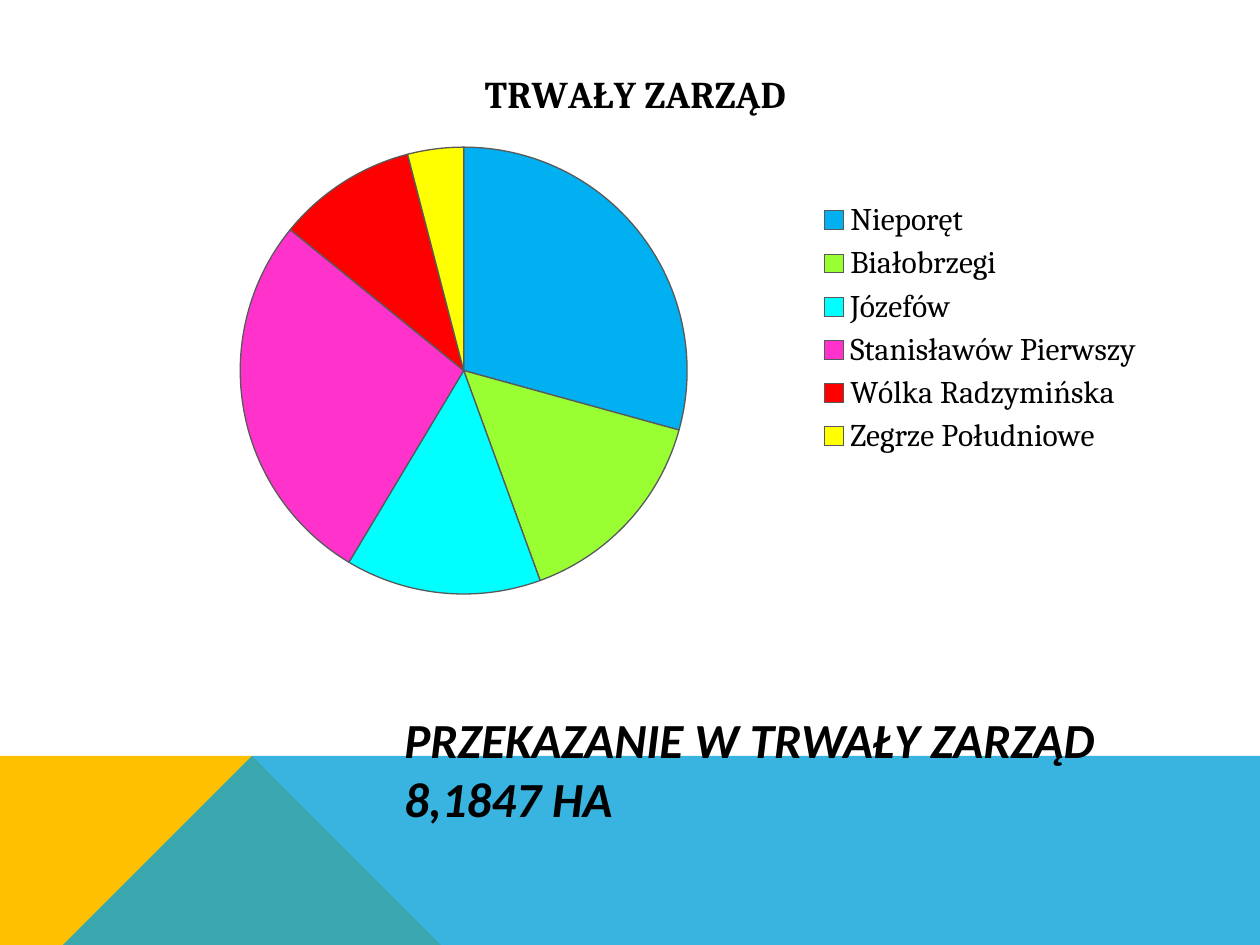
from pptx import Presentation
from pptx import util as u
from pptx.chart.data import CategoryChartData
from pptx.dml.color import RGBColor
from pptx.enum import chart as charts, text
from pptx.oxml import parse_xml
from lxml import etree

DRAWING = "http://schemas.openxmlformats.org/drawingml/2006/main"
CHART = "http://schemas.openxmlformats.org/drawingml/2006/chart"


def paint(format_part, color):
    """Give a fill, line or font part a solid hex colour."""
    if hasattr(format_part, "solid"):
        format_part.solid()
        format_part = format_part.fore_color
    else:
        format_part = format_part.color
    format_part.rgb = RGBColor.from_string(color)


def add_span(para, words, font="Calibri", size=28, color="000000",
             bold=False, italic=False):
    span = para.add_run()
    span.text = words
    span.font.name = font
    span.font.size = u.Pt(size)
    span.font.bold = bold
    span.font.italic = italic
    paint(span.font, color)


deck = Presentation()
deck.slide_width, deck.slide_height = u.Inches(10), u.Inches(7.5)
page = deck.slides.add_slide(deck.slide_layouts[5])
paint(page.background.fill, "FFFFFF")

# Bottom band: yellow triangle under a translucent blue slope
top, bottom, peak = 5.52, 7.5, 2.23
bands = [
    ("FFC000", 100, [(0, bottom), (0, top), (peak, top), (3.91, bottom)]),
    ("08A1D9", 80, [(0, bottom), (peak, top), (10, top), (10, bottom)]),
]
for color, opacity, corners in bands:
    outline = page.shapes.build_freeform(*corners[0], scale=u.Inches(1))
    outline.add_line_segments(corners[1:], close=True)
    band = outline.convert_to_shape()
    band.shadow.inherit = False
    band.line.fill.background()
    paint(band.fill, color)
    if opacity < 100:
        tint = band.element.find(f".//{{{DRAWING}}}srgbClr")
        etree.SubElement(tint, f"{{{DRAWING}}}alpha", val=str(opacity * 1000))

# Title, brought in front of the band
title = page.shapes.title
title.left, title.top = u.Inches(3.11), u.Inches(5.8)
title.width, title.height = u.Inches(6.06), u.Inches(0.6)
page.shapes.element.append(title.element)
frame = title.text_frame
frame.word_wrap = True
frame.auto_size = text.MSO_AUTO_SIZE.NONE
frame.vertical_anchor = text.MSO_ANCHOR.MIDDLE
para = frame.paragraphs[0]
para.alignment = text.PP_ALIGN.LEFT
add_span(para, "PRZEKAZANIE W TRWAŁY ZARZĄD", bold=True, italic=True)
para.add_line_break()
add_span(para, "8,1847 HA", bold=True, italic=True)

# Pie chart of the villages
villages = [
    ("Nieporęt", 29, "00B0F0"),
    ("Białobrzegi", 15, "99FF33"),
    ("Józefów", 14, "00FFFF"),
    ("Stanisławów Pierwszy", 27, "FF33CC"),
    ("Wólka Radzymińska", 10, "FF0000"),
    ("Zegrze Południowe", 4, "FFFF00"),
]
names, shares, colors = zip(*villages)
data = CategoryChartData()
data.categories = names
data.add_series("TRWAŁY ZARZĄD", shares)
pie = page.shapes.add_chart(
    charts.XL_CHART_TYPE.PIE, u.Inches(0.91), u.Inches(0.36),
    u.Inches(8.27), u.Inches(4.49), data).chart
pie.font.name, pie.font.size = "Cambria", u.Pt(18)
paint(pie.font, "000000")
pie.has_title = True
add_span(pie.chart_title.text_frame.paragraphs[0], "TRWAŁY ZARZĄD",
         font="Cambria", size=21.6, bold=True)
pie.chart_title.include_in_layout = False
pie.has_legend = True
pie.legend.position = charts.XL_LEGEND_POSITION.RIGHT
pie.legend.include_in_layout = False

plot = pie.plots[0]
plot.vary_by_categories = True
for number, color in enumerate(colors):
    wedge = plot.series[0].points[number].format
    paint(wedge.fill, color)
    paint(wedge.line, "595959")
    wedge.line.width = u.Pt(0.75)

# Place of the pie inside the chart, as shares of its size
places = "".join(f'<c:{tag} val="{share}"/>' for tag, share in
                 [("x", 0.12), ("y", 0.18), ("w", 0.43), ("h", 0.79)])
area = pie.element.find(f".//{{{CHART}}}plotArea")
for old in area.findall(f"{{{CHART}}}layout"):
    area.remove(old)
area.insert(0, parse_xml(
    f'<c:layout xmlns:c="{CHART}"><c:manualLayout>'
    '<c:layoutTarget val="inner"/><c:xMode val="edge"/><c:yMode val="edge"/>'
    f'{places}</c:manualLayout></c:layout>'))

deck.save("out.pptx")
